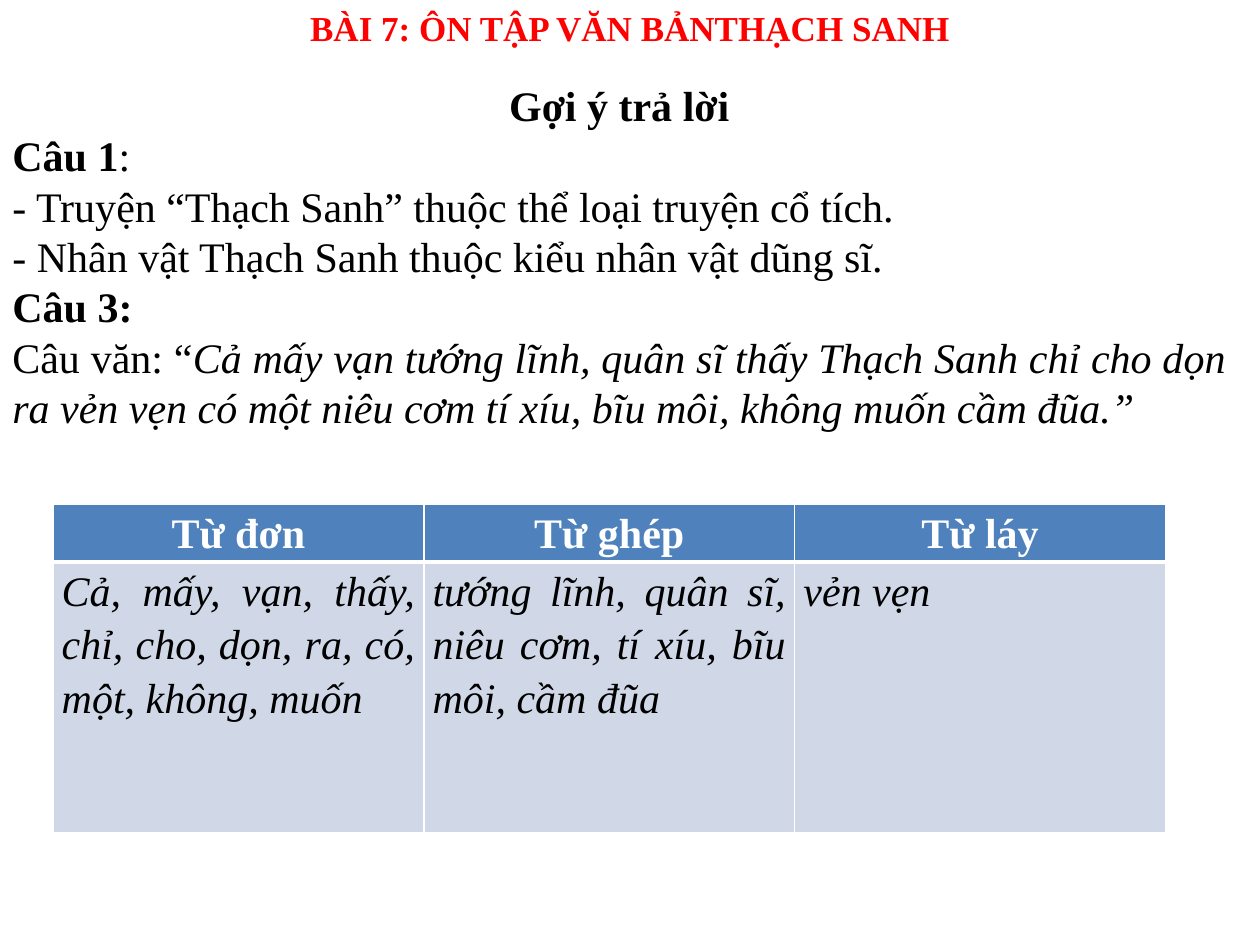
"""Build the review slide on the Thạch Sanh folk tale."""
from lxml import etree
from pptx import Presentation
from pptx import util as u
from pptx.dml import color
from pptx.enum import text
from pptx.oxml import ns

FONT = "Times New Roman"
CENTER, LEFT, JUSTIFY = text.PP_ALIGN.CENTER, text.PP_ALIGN.LEFT, text.PP_ALIGN.JUSTIFY
PLAIN, BOLD, ITALIC = "", "b", "i"

TITLE = [(CENTER, [("BÀI 7: ÔN TẬP VĂN BẢNTHẠCH SANH", BOLD)])]
ANSWERS = [
    (CENTER, [("Gợi ý trả lời", BOLD)]),
    (LEFT, [("Câu 1", BOLD), (":", PLAIN)]),
    (JUSTIFY, [("- Truyện “Thạch Sanh” thuộc thể loại truyện cổ tích.", PLAIN)]),
    (JUSTIFY, [("- Nhân vật Thạch Sanh thuộc kiểu nhân vật dũng sĩ.", PLAIN)]),
    (JUSTIFY, [("Câu 3:", BOLD)]),
    (JUSTIFY, [
        ("Câu văn: “", PLAIN),
        ("Cả mấy vạn tướng lĩnh, quân sĩ thấy Thạch Sanh chỉ cho dọn ra vẻn vẹn "
         "có một niêu cơm tí xíu, bĩu môi, không muốn cầm đũa.”", ITALIC),
    ]),
]
HEADERS = ["Từ đơn", "Từ ghép", "Từ láy"]
WORDS = [
    "Cả, mấy, vạn, thấy, chỉ, cho, dọn, ra, có, một, không, muốn",
    "tướng lĩnh, quân sĩ, niêu cơm, tí xíu, bĩu môi, cầm đũa",
    "vẻn vẹn",
]


def rgb(value):
    """Turn a hex string into a colour."""
    return color.RGBColor.from_string(value)


def add_runs(p, runs, size, ink):
    """Add styled runs to a paragraph."""
    for words, style in runs:
        r = p.add_run()
        r.text = words
        r.font.name, r.font.size = FONT, u.Pt(size)
        r.font.bold, r.font.italic = style == BOLD, style == ITALIC
        r.font.color.rgb = rgb(ink)


def add_text(s, box, paragraphs, size, ink):
    """Add a wrapped text box holding aligned paragraphs."""
    tf = s.shapes.add_textbox(*map(u.Inches, box)).text_frame
    tf.word_wrap = True
    for i, (align, runs) in enumerate(paragraphs):
        p = tf.paragraphs[0] if i == 0 else tf.add_paragraph()
        p.alignment = align
        add_runs(p, runs, size, ink)


def set_borders(cell, bottom):
    """Draw white borders with a given bottom width in points."""
    tc_pr = cell._tc.get_or_add_tcPr()
    for side, width in zip("LRTB", (1, 1, 1, bottom)):
        ln = etree.SubElement(tc_pr, ns.qn(f"a:ln{side}"), w=str(u.Pt(width)))
        fill = etree.SubElement(ln, ns.qn("a:solidFill"))
        etree.SubElement(fill, ns.qn("a:srgbClr"), val="FFFFFF")


def fill_cell(cell, words, align, style, ink, back, bottom):
    """Write and style one table cell."""
    set_borders(cell, bottom)
    cell.fill.solid()
    cell.fill.fore_color.rgb = rgb(back)
    cell.margin_left = cell.margin_right = u.Inches(0.07)
    cell.margin_top = cell.margin_bottom = 0
    p = cell.text_frame.paragraphs[0]
    p.alignment, p.line_spacing = align, 1.15
    add_runs(p, [(words, style)], 24, ink)


def add_word_table(s, box, header_height):
    """Add the table that sorts words by type."""
    left, top, width, height = map(u.Inches, box)
    table = s.shapes.add_table(2, len(HEADERS), left, top, width, height).table
    table.rows[0].height = u.Inches(header_height)
    table.rows[1].height = height - u.Inches(header_height)
    for col, (header, words) in enumerate(zip(HEADERS, WORDS)):
        fill_cell(table.cell(0, col), header, CENTER, BOLD, "FFFFFF", "4F81BD", 3)
        fill_cell(table.cell(1, col), words, JUSTIFY, ITALIC, "000000", "D0D8E8", 1)


def main():
    """Build and save the slide."""
    prs = Presentation()
    prs.slide_width, prs.slide_height = u.Inches(10), u.Inches(7.5)
    s = prs.slides.add_slide(prs.slide_layouts[6])
    add_text(s, (0, 0, 10, 1.11), TITLE, 20, "FF0000")
    add_text(s, (0, 0.58, 9.83, 6.16), ANSWERS, 24, "000000")
    add_word_table(s, (0.42, 4, 8.83, 2.6), 0.45)
    prs.save("out.pptx")


if __name__ == "__main__":
    main()
